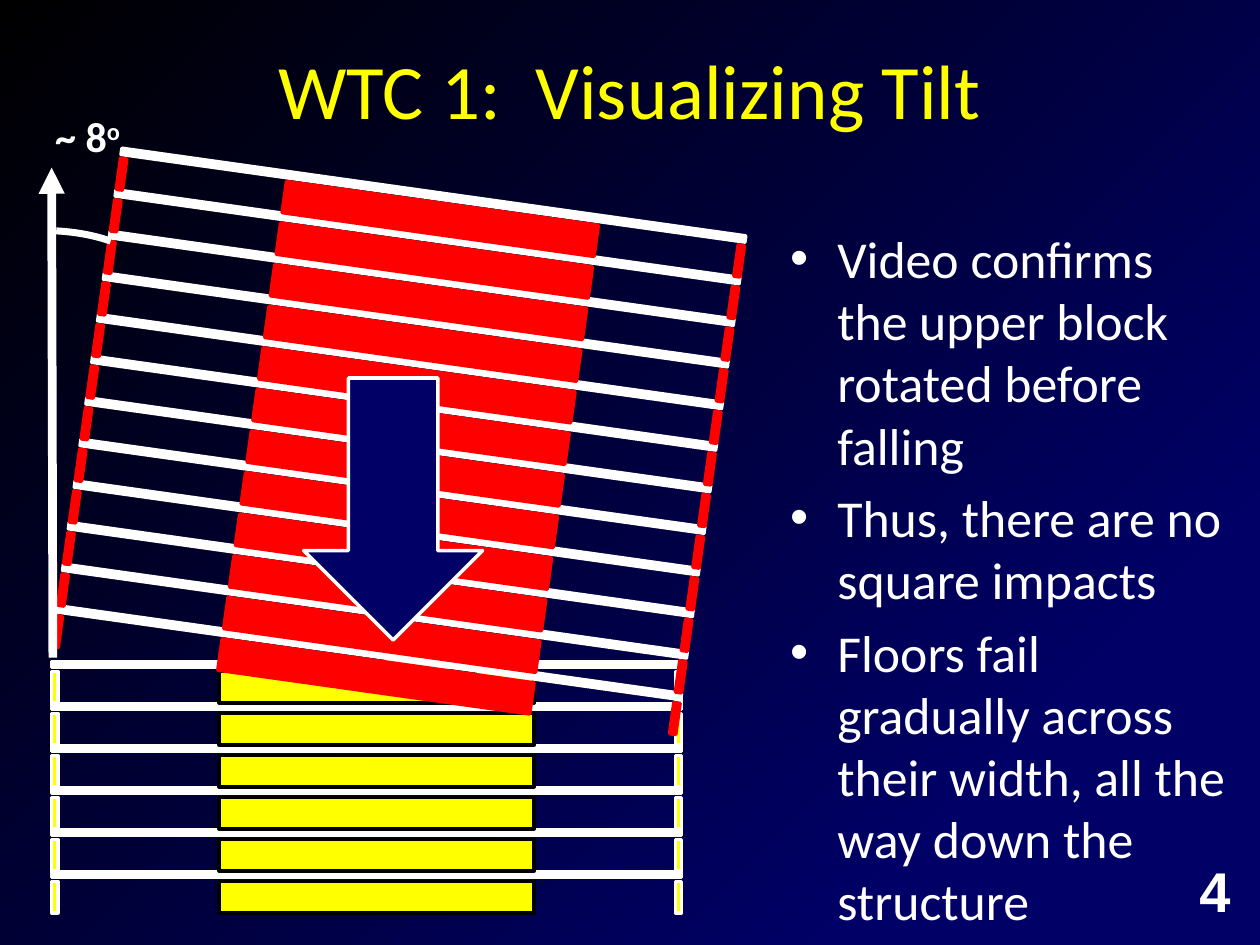
import math
from dataclasses import dataclass

from lxml import etree
from pptx import Presentation
from pptx import util as u
from pptx.dml import color
from pptx.enum import shapes, text
from pptx.oxml import ns

Inches, Pt = u.Inches, u.Pt


@dataclass
class Theme:
    black: str = "000000"
    white: str = "FFFFFF"
    navy: str = "000066"
    yellow: str = "FFFF00"
    red: str = "FF0000"
    font: str = "Calibri"
    number_font: str = "Arial"
    title_size: float = 44
    body_size: float = 29.6
    label_size: float = 24
    number_size: float = 32


theme = Theme()


def add_run(para, words, size, ink, font=theme.font, bold=False):
    span = para.add_run()
    span.text = words
    span.font.size = Pt(size)
    span.font.name = font
    span.font.bold = bold
    span.font.color.rgb = color.RGBColor.from_string(ink)
    return span


def add_part(parent, kind, left, top, width, height, fill, line, weight=2):
    part = parent.add_shape(kind, Inches(left), Inches(top),
                            Inches(width), Inches(height))
    part.shadow.inherit = False
    if fill:
        part.fill.solid()
        part.fill.fore_color.rgb = color.RGBColor.from_string(fill)
    else:
        part.fill.background()
    part.line.color.rgb = color.RGBColor.from_string(line)
    part.line.width = Pt(weight)
    return part


deck = Presentation()
deck.slide_width, deck.slide_height = Inches(10), Inches(7.5)
page = deck.slides.add_slide(deck.slide_layouts[1])

# Background: black to navy, towards the lower right
backdrop = page.background.fill
backdrop.gradient()
backdrop.gradient_angle = 315
for stop, (position, ink) in zip(backdrop.gradient_stops,
                                 [(0, theme.black), (0.81, theme.navy)]):
    stop.position = position
    stop.color.rgb = color.RGBColor.from_string(ink)

# Title
title = page.shapes.title
title.left, title.top = Inches(0.5), Inches(0.08)
title.width, title.height = Inches(9), Inches(1.25)
title.text_frame.vertical_anchor = text.MSO_ANCHOR.MIDDLE
title_para = title.text_frame.paragraphs[0]
title_para.alignment = text.PP_ALIGN.CENTER
add_run(title_para, "WTC 1:  Visualizing Tilt", theme.title_size, theme.yellow)

# Bullet list
body = page.placeholders[1]
body.left, body.top = Inches(6.17), Inches(1.75)
body.width, body.height = Inches(3.67), Inches(5.5)
body.text_frame.auto_size = text.MSO_AUTO_SIZE.NONE
points = [
    "Video confirms the upper block rotated before falling",
    "Thus, there are no square impacts",
    "Floors fail gradually across their width, all the way down the structure",
]
for index, point in enumerate(points):
    para = body.text_frame.paragraphs[0] if index == 0 else body.text_frame.add_paragraph()
    add_run(para, point, theme.body_size, theme.white)

# Tower blocks: stacked storeys, each with a floor, two outer columns and a core.
# A block is its storey count, bottom floor centre, tilt, fill, column and core lines.
storey_height = 1 / 3
blocks = [
    (6, 2.91, 6.94, 0, theme.yellow, theme.white, theme.black),
    (12, 2.93, 5.18, 8, theme.red, theme.red, theme.red),
]
for count, base_x, base_y, tilt, fill, column_line, core_line in blocks:
    block = page.shapes.add_group_shape()
    sine, cosine = math.sin(math.radians(tilt)), math.cos(math.radians(tilt))
    # Offset from the floor centre, size, fill and line
    parts = [
        (0, 0, 5, 0.05, theme.white, theme.white),
        (-2.475, 0.18, 0.05, 0.25, fill, column_line),
        (2.475, 0.18, 0.05, 0.25, fill, column_line),
        (0.08, 0.18, 2.5, 0.25, fill, core_line),
    ]
    for storey in range(count):
        for across, below, width, height, part_fill, part_line in parts:
            down = below - storey * storey_height
            center_x = base_x + across * cosine - down * sine
            center_y = base_y + across * sine + down * cosine
            part = add_part(block.shapes, shapes.MSO_SHAPE.RECTANGLE,
                            center_x - width / 2, center_y - height / 2,
                            width, height, part_fill, part_line)
            part.rotation = tilt

# Vertical reference arrow
vertical = page.shapes.add_connector(shapes.MSO_CONNECTOR.STRAIGHT, Inches(0.42),
                                     Inches(5.22), Inches(0.41), Inches(1.33))
vertical.line.color.rgb = color.RGBColor.from_string(theme.white)
vertical.line.width = Pt(5)
etree.SubElement(vertical.line._get_or_add_ln(), ns.qn("a:tailEnd"), type="triangle")
etree.SubElement(vertical._element.spPr, ns.qn("a:effectLst"))

# Angle arc and its label
arc = add_part(page.shapes, shapes.MSO_SHAPE.ARC, -0.5, 1.83, 1.67, 0.7,
               None, theme.white, 4)
arc.adjustments[0], arc.adjustments[1] = 172.7, 200.38

label = page.shapes.add_textbox(Inches(0.34), Inches(0.83), Inches(0.74), Inches(0.5))
label.text_frame.word_wrap = False
label_para = label.text_frame.paragraphs[0]
add_run(label_para, "~ 8", theme.label_size, theme.white, bold=True)
degree = add_run(label_para, "o", theme.label_size, theme.white, bold=True)
degree.font._element.set("baseline", "30000")

# Falling direction
add_part(page.shapes, shapes.MSO_SHAPE.DOWN_ARROW, 2.41, 3, 1.42, 2.08,
         theme.navy, theme.white)

# Page number
number = page.shapes.add_textbox(Inches(9.42), Inches(6.75), Inches(0.5), Inches(0.64))
number.text_frame.word_wrap = True
add_run(number.text_frame.paragraphs[0], "4", theme.number_size, theme.white,
        theme.number_font, True)

deck.save("out.pptx")
